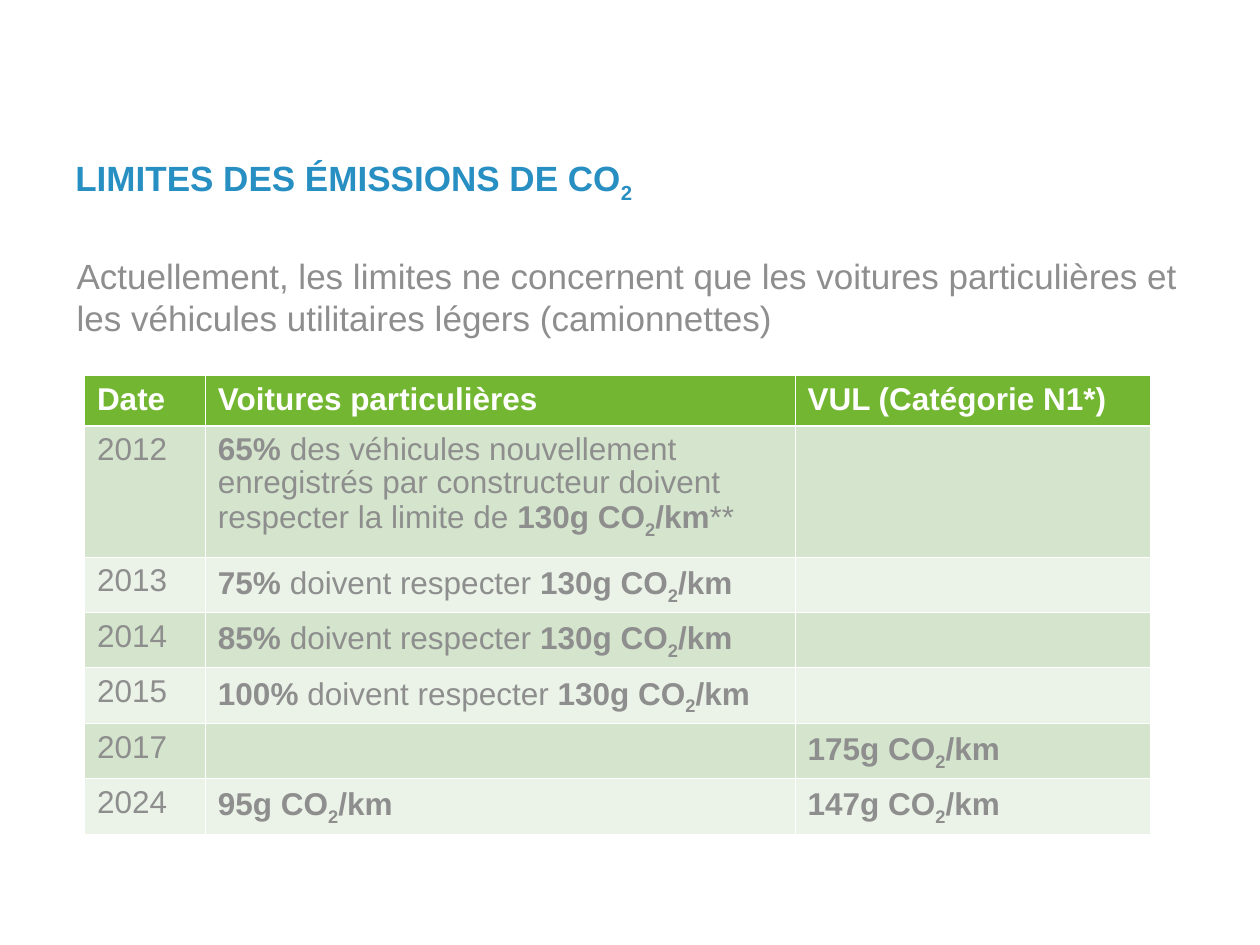
from lxml.etree import SubElement
from pptx import Presentation
from pptx.dml.color import RGBColor
from pptx.enum.text import MSO_ANCHOR as Anchor
from pptx.oxml.ns import qn
from pptx.util import Inches, Pt

COLORS = {
    "title": "288FC3",
    "text": "8D8E8D",
    "header": "73B632",
    "odd": "D5E5CD",
    "even": "EBF3E8",
    "white": "FFFFFF",
}
FONT = "Arial"
COLUMN_WIDTHS = [0.96, 4.68, 2.82]
ROW_HEIGHTS = [0.4, 1.04] + [0.44] * 5

# Cell markup: *bold* segments are listed as (text, bold); CO₂ becomes a subscript
HEADERS = ["Date", "Voitures particulières", "VUL (Catégorie N1*)"]


def share(percent):
    return [(percent + " ", True), ("doivent respecter ", False), ("130g CO₂/km", True)]


ROWS = [
    ("2012", [
        ("65% ", True),
        ("des véhicules nouvellement enregistrés par constructeur "
         "doivent respecter la limite de", False),
        (" 130g CO₂/km", True),
        ("**", False),
    ], []),
    ("2013", share("75%"), []),
    ("2014", share("85%"), []),
    ("2015", share("100%"), []),
    ("2017", [], [("175g CO₂/km", True)]),
    ("2024", [("95g CO₂/km", True)], [("147g CO₂/km", True)]),
]


def rgb(name):
    return RGBColor.from_string(COLORS[name])


def add_run(paragraph, text, size, color, bold, subscript=False):
    run = paragraph.add_run()
    run.text = text
    font = run.font
    font.name, font.size, font.bold = FONT, Pt(size), bold
    font.color.rgb = rgb(color)
    if subscript:
        run._r.get_or_add_rPr().set("baseline", "-25000")


def write_segments(paragraph, segments, size, color):
    """Write (text, bold) segments, setting each ₂ as a subscript run."""
    for text, bold in segments:
        before, mark, after = text.partition("₂")
        add_run(paragraph, before, size, color, bold)
        if mark:
            add_run(paragraph, "2", size, color, bold, subscript=True)
        if after:
            add_run(paragraph, after, size, color, bold)


def add_text(slide, left, top, width, height, segments, color):
    box = slide.shapes.add_textbox(Inches(left), Inches(top), Inches(width), Inches(height))
    frame = box.text_frame
    frame.word_wrap = True
    frame.vertical_anchor = Anchor.TOP
    frame.margin_top = Inches(0.08)
    write_segments(frame.paragraphs[0], segments, 20, color)


def set_borders(cell, widths):
    """Draw white borders; they must precede the fill in the cell properties."""
    properties = cell._tc.get_or_add_tcPr()
    for side, width in widths.items():
        line = SubElement(properties, qn("a:" + side), w=str(Pt(width)))
        fill = SubElement(line, qn("a:solidFill"))
        SubElement(fill, qn("a:srgbClr"), val=COLORS["white"])


def fill_cell(cell, segments, text_color, fill_color, borders):
    set_borders(cell, borders)
    cell.fill.solid()
    cell.fill.fore_color.rgb = rgb(fill_color)
    cell.margin_left = cell.margin_right = Inches(0.1)
    cell.margin_top, cell.margin_bottom = Inches(0.07), Inches(0.05)
    paragraph = cell.text_frame.paragraphs[0]
    paragraph.line_spacing = 0.93
    write_segments(paragraph, segments, 18, text_color)


def add_limits_table(slide):
    frame = slide.shapes.add_table(
        len(ROW_HEIGHTS), len(COLUMN_WIDTHS), Inches(0.67), Inches(2.98),
        Inches(sum(COLUMN_WIDTHS)), Inches(sum(ROW_HEIGHTS)))
    table = frame.table
    for column, width in zip(table.columns, COLUMN_WIDTHS):
        column.width = Inches(width)
    for row, height in zip(table.rows, ROW_HEIGHTS):
        row.height = Inches(height)

    contents = [[[(header, True)] for header in HEADERS]]
    contents += [[[(year, False)], cars, vans] for year, cars, vans in ROWS]
    for r, row in enumerate(contents):
        text_color = "text" if r else "white"
        fill_color = ("even", "odd")[r % 2] if r else "header"
        # The rule under the header is thicker
        borders = {
            "lnL": 0.45, "lnR": 0.45,
            "lnT": 1.47 if r == 1 else 0.45,
            "lnB": 1.47 if r == 0 else 0.45,
        }
        for c, segments in enumerate(row):
            fill_cell(table.cell(r, c), segments, text_color, fill_color, borders)


def main():
    presentation = Presentation()
    presentation.slide_width, presentation.slide_height = Inches(10), Inches(7.5)
    slide = presentation.slides.add_slide(presentation.slide_layouts[6])

    # Title and introduction
    add_text(slide, 0.5, 1.16, 8.86, 0.71, [("LIMITES DES ÉMISSIONS DE CO₂", True)], "title")
    add_text(slide, 0.51, 1.94, 9, 4.57, [(
        "Actuellement, les limites ne concernent que les voitures particulières "
        "et les véhicules utilitaires légers (camionnettes)", False)], "text")

    # Emission limits by year
    add_limits_table(slide)
    presentation.save("out.pptx")


if __name__ == "__main__":
    main()
